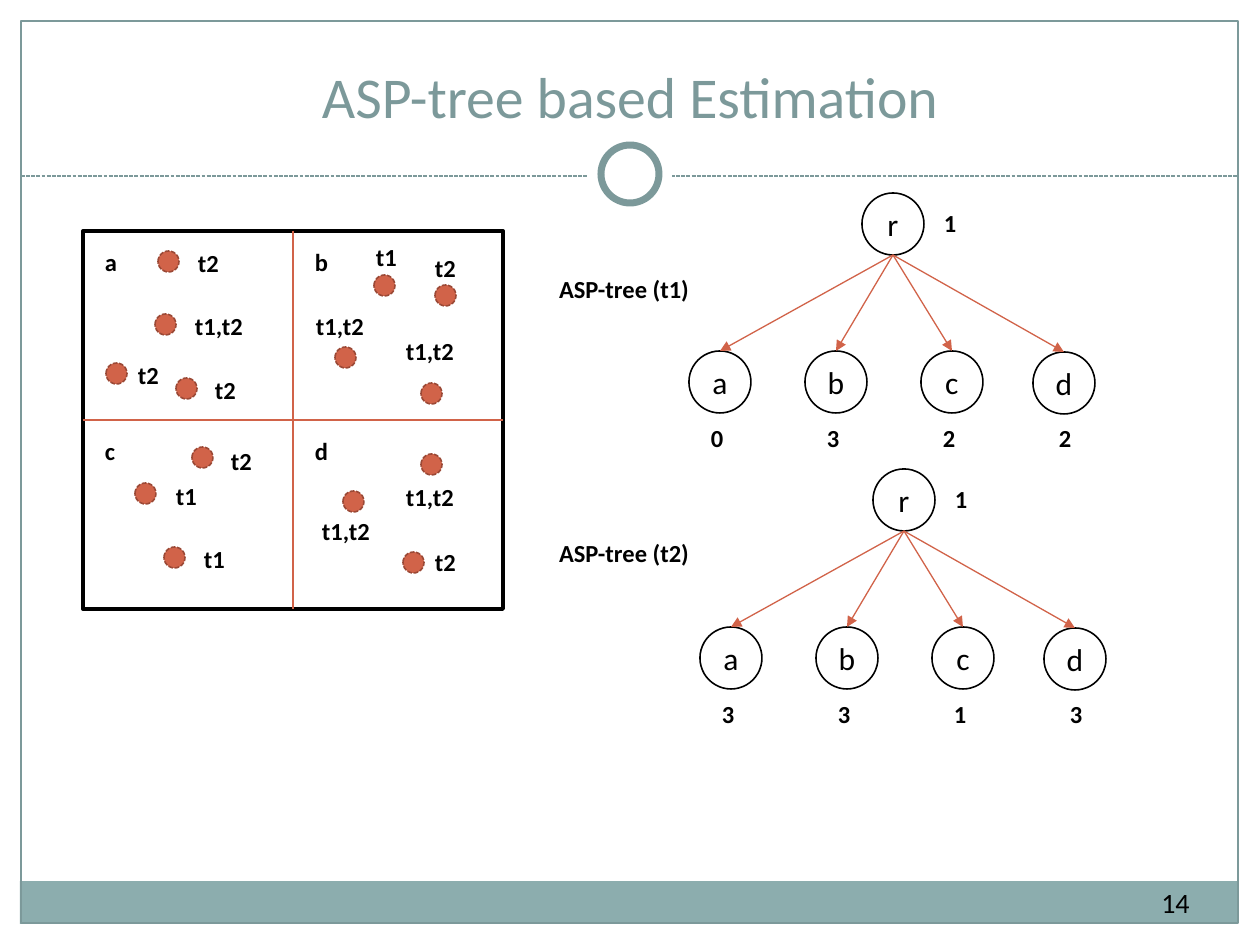
import lxml.etree
import pptx
import pptx.dml.color
import pptx.enum.dml
import pptx.enum.shapes
import pptx.enum.text
import pptx.oxml.ns
import pptx.util

PX = 914400 / 126
COLORS = {"sage": "7C999A", "band": "8CADAE", "white": "FFFFFF",
          "black": "000000", "coral": "D16349", "rust": "9B4936"}
SHAPES = pptx.enum.shapes.MSO_SHAPE
STRAIGHT = pptx.enum.shapes.MSO_CONNECTOR.STRAIGHT
DASH = pptx.enum.dml.MSO_LINE.SQUARE_DOT
ALIGN = pptx.enum.text.PP_ALIGN
ANCHOR = pptx.enum.text.MSO_ANCHOR


def add_figure(kind, box, fill=None, line=None, width=0.9):
    """Add a preset shape; a missing fill or line colour means none."""
    shape = slide.shapes.add_shape(kind, *[round(length * PX) for length in box])
    shape.shadow.inherit = False
    for target, color in ((shape.fill, fill), (shape.line.fill, line)):
        if color:
            target.solid()
            target.fore_color.rgb = pptx.dml.color.RGBColor.from_string(COLORS[color])
        else:
            target.background()
    if line:
        shape.line.width = pptx.util.Pt(width)
    return shape


def write_text(shape, text, size, color="black", bold=False,
               align=ALIGN.CENTER, anchor=ANCHOR.MIDDLE, inset=6):
    frame = shape.text_frame
    frame.word_wrap = True
    frame.vertical_anchor = anchor
    frame.margin_left = frame.margin_right = round(inset * 2 * PX)
    frame.margin_top = frame.margin_bottom = round(inset * PX)
    paragraph = frame.paragraphs[0]
    paragraph.alignment = align
    run = paragraph.add_run()
    run.text = text
    run.font.name = "Calibri"
    run.font.size = pptx.util.Pt(size)
    run.font.bold = bold
    run.font.color.rgb = pptx.dml.color.RGBColor.from_string(COLORS[color])


presentation = pptx.Presentation()
presentation.slide_width = round(1260 * PX)
presentation.slide_height = round(945 * PX)
slide = presentation.slides.add_slide(presentation.slide_layouts[5])
connectors = []  # (connector, colour, dashed, arrowhead)
labels = []  # (text, left, top, width)

# Frame, footer band and header ornament
add_figure(SHAPES.RECTANGLE, (20, 881, 1218, 43), fill="band")
add_figure(SHAPES.RECTANGLE, (21, 21, 1217, 902), line="sage", width=0.75)
header_rule = slide.shapes.add_connector(
    STRAIGHT, *[round(length * PX) for length in (21, 176, 1238, 176)])
connectors.append((header_rule, "sage", True, False))
add_figure(SHAPES.OVAL, (588, 132, 84, 84), fill="white")
add_figure(SHAPES.OVAL, (601, 145, 58, 58), fill="white", line="sage", width=4)

title = slide.shapes.title
title.left, title.top, title.width, title.height = [
    round(length * PX) for length in (42, 31, 1176, 105)]
write_text(title, "ASP-tree based Estimation", 33, "sage", anchor=ANCHOR.BOTTOM)

page_number = slide.shapes.add_textbox(
    *[round(length * PX) for length in (1144, 872, 63, 60)])
write_text(page_number, "14", 16, inset=3)

# One tree per term: a root, four leaves and their counts
NODE = 62
LEAVES = [("a", -173, 158), ("b", -57, 158), ("c", 59, 158), ("d", 171, 159)]
TREES = [("ASP-tree (t1)", 268, 862, 193, "0322"),
         ("ASP-tree (t2)", 532, 873, 469, "3313")]
for name, name_top, root_left, root_top, counts in TREES:
    root = add_figure(SHAPES.OVAL, (root_left, root_top, NODE, NODE), line="black")
    write_text(root, "r", 18, inset=3)
    labels.append((name, 547, name_top, 222))
    labels.append(("1", root_left + 70, root_top + 9, 39))
    for index, (letter, dx, dy) in enumerate(LEAVES):
        leaf = add_figure(
            SHAPES.OVAL, (root_left + dx, root_top + dy, NODE, NODE), line="black")
        write_text(leaf, letter, 18, inset=3)
        arrow = slide.shapes.add_connector(
            STRAIGHT, root.left + root.width // 2, root.top + root.height,
            leaf.left + leaf.width // 2, leaf.top)
        arrow.end_connect(leaf, 0)
        connectors.append((arrow, "coral", False, True))
        labels.append((counts[index], root_left - 163 + 116 * index,
                       root_top + 224, 39))

# Region split into four quadrants
LEFT, TOP, WIDTH, HEIGHT = 83, 231, 420, 378
region = add_figure(
    SHAPES.RECTANGLE, (LEFT, TOP, WIDTH, HEIGHT), line="black", width=2.25)
for start, end in ((1, 3), (0, 2)):
    divider = slide.shapes.add_connector(STRAIGHT, 0, 0, 0, 0)
    divider.begin_connect(region, start)
    divider.end_connect(region, end)
    connectors.append((divider, "coral", False, False))
for index, letter in enumerate("abcd"):
    row, column = divmod(index, 2)
    labels.append((letter, LEFT + 10 + column * WIDTH // 2,
                   TOP + 10 + row * HEIGHT // 2, 39))

# Points: dot left and top, terms, label left and top
POINTS = [
    (158, 251, "t2", 186, 242), (155, 314, "t1,t2", 183, 305),
    (106, 363, "t2", 126, 354), (176, 378, "t2", 203, 369),
    (374, 275, "t1", 364, 236), (435, 285, "t2", 423, 247),
    (335, 347, "t1,t2", 304, 305), (421, 383, "t1,t2", 394, 330),
    (192, 447, "t2", 219, 440), (135, 483, "t1", 164, 475),
    (164, 547, "t1", 192, 538), (421, 454, "t1,t2", 394, 476),
    (343, 491, "t1,t2", 310, 510), (403, 552, "t2", 423, 541),
]
for dot_left, dot_top, terms, label_left, label_top in POINTS:
    dot = add_figure(SHAPES.OVAL, (dot_left, dot_top, 21, 21), "coral", "rust")
    dot.line.dash_style = DASH
    labels.append((terms, label_left, label_top, 101))

for text, left, top, width in labels:
    label = slide.shapes.add_textbox(
        *[round(length * PX) for length in (left, top, width, 43)])
    write_text(label, text, 14, bold=True, align=ALIGN.LEFT, anchor=ANCHOR.TOP)

for connector, color, dashed, arrowhead in connectors:
    connector.line.width = pptx.util.Pt(0.75)
    connector.line.color.rgb = pptx.dml.color.RGBColor.from_string(COLORS[color])
    if dashed:
        connector.line.dash_style = DASH
    properties = connector.element.spPr
    if arrowhead:
        lxml.etree.SubElement(properties.find(pptx.oxml.ns.qn("a:ln")),
                              pptx.oxml.ns.qn("a:tailEnd"), type="triangle")
    lxml.etree.SubElement(properties, pptx.oxml.ns.qn("a:effectLst"))

presentation.save("out.pptx")
